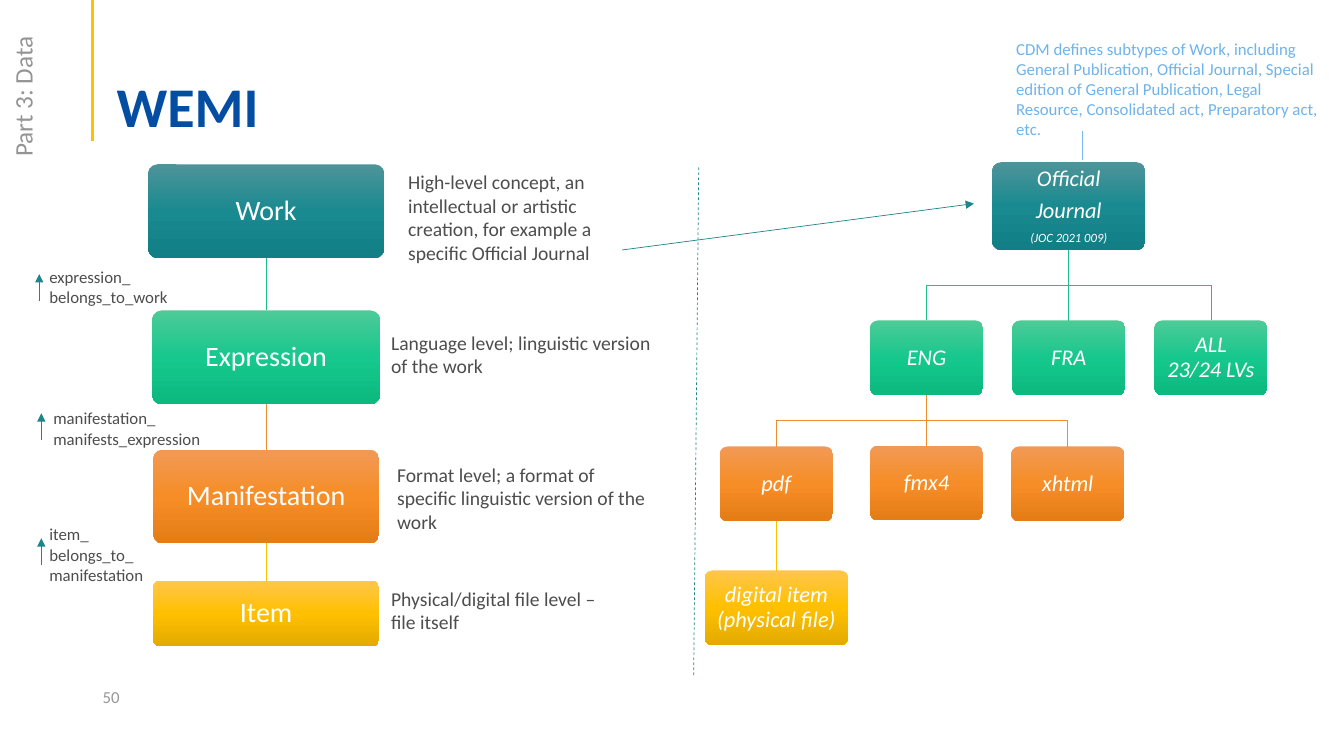
import pptx
import pptx.util
import pptx.dml.color
import pptx.enum.dml
import pptx.enum.shapes
import pptx.enum.text
import pptx.oxml.ns
from lxml import etree

PX = 9144
FONT = "Calibri"
RGB = pptx.dml.color.RGBColor
qn = pptx.oxml.ns.qn
ANCHOR = pptx.enum.text.MSO_ANCHOR
ALIGN = pptx.enum.text.PP_ALIGN

WHITE = RGB(0xFF, 0xFF, 0xFF)
NAVY = RGB(0x03, 0x4E, 0xA2)
DARK = RGB(0x4D, 0x4D, 0x4D)
SIDE_GREY = RGB(0x94, 0x94, 0x94)
NUMBER_GREY = RGB(0x97, 0x97, 0x97)
SKY = RGB(0x6E, 0xB3, 0xEB)
SKY_LINE = RGB(0x78, 0xB6, 0xFC)
TEAL_LINE = RGB(0x1E, 0x85, 0x8B)
GREEN_LINE = RGB(0x1E, 0xC0, 0x8A)
ORANGE_LINE = RGB(0xED, 0x8D, 0x2F)
YELLOW = RGB(0xFF, 0xC0, 0x00)
TEAL_FILL = (RGB(0x4E, 0x94, 0x99), RGB(0x19, 0x8A, 0x90), RGB(0x11, 0x7F, 0x85))
GREEN_FILL = (RGB(0x4E, 0xCA, 0x98), RGB(0x16, 0xC8, 0x8D), RGB(0x0C, 0xB9, 0x7F))
ORANGE_FILL = (RGB(0xF1, 0x9A, 0x56), RGB(0xF6, 0x8D, 0x26), RGB(0xE5, 0x7D, 0x17))
YELLOW_FILL = (RGB(0xFF, 0xC6, 0x4B), YELLOW, RGB(0xE3, 0xAB, 0x00))


def px(*lengths):
    return [pptx.util.Emu(round(length * PX)) for length in lengths]


def style_runs(para, size, color, bold=False, italic=False):
    for span in para.runs:
        span.font.name = FONT
        span.font.size = pptx.util.Pt(size)
        span.font.color.rgb = color
        span.font.bold = bold
        span.font.italic = italic


def add_text(page, box, text, size, color, wrap=True, anchor=ANCHOR.TOP, bold=False):
    label = page.shapes.add_textbox(*px(*box))
    frame = label.text_frame
    frame.word_wrap = wrap
    frame.vertical_anchor = anchor
    frame.text = text
    for para in frame.paragraphs:
        style_runs(para, size, color, bold)
    return label


def add_line(page, start, end, color, width=0.5, arrow=False):
    line = page.shapes.add_connector(
        pptx.enum.shapes.MSO_CONNECTOR.STRAIGHT, *px(*start, *end))
    line.line.color.rgb = color
    line.line.width = pptx.util.Pt(width)
    if arrow:
        etree.SubElement(line.line._get_or_add_ln(), qn("a:tailEnd"), type="triangle")
    etree.SubElement(line._element.spPr, qn("a:effectLst"))
    return line


def join_down(page, upper, lower, color):
    line = add_line(page, (0, 0), (0, 0), color)
    line.begin_connect(upper, 2)
    line.end_connect(lower, 0)


def branch_down(page, upper, lower, color):
    start_x = upper.left + upper.width // 2
    end_x = lower.left + lower.width // 2
    start_y = upper.top + upper.height
    middle_y = (start_y + lower.top) // 2
    builder = page.shapes.build_freeform(start_x, start_y)
    builder.add_line_segments(
        [(start_x, middle_y), (end_x, middle_y), (end_x, lower.top)], close=False)
    branch = builder.convert_to_shape()
    branch.shadow.inherit = False
    branch.fill.background()
    branch.line.color.rgb = color
    branch.line.width = pptx.util.Pt(0.5)


def add_node(page, center, top, width, height, lines, fill, italic=False):
    node = page.shapes.add_shape(
        pptx.enum.shapes.MSO_SHAPE.ROUNDED_RECTANGLE,
        *px(center - width / 2, top, width, height))
    node.adjustments[0] = 0.1
    node.shadow.inherit = False
    node.line.fill.background()
    node.fill.gradient()
    node.fill.gradient_angle = 270
    stops = node._element.spPr.find(qn("a:gradFill")).find(qn("a:gsLst"))
    for stop in list(stops):
        stops.remove(stop)
    for position, color in zip((0, 50000, 100000), fill):
        stop = etree.SubElement(stops, qn("a:gs"), pos=str(position))
        etree.SubElement(stop, qn("a:srgbClr"), val=str(color))
    frame = node.text_frame
    frame.word_wrap = True
    frame.vertical_anchor = ANCHOR.MIDDLE
    frame.margin_left, frame.margin_right, frame.margin_top, frame.margin_bottom = px(9, 9, 9, 9)
    frame.text = "\n".join(text for text, size in lines)
    for para, (text, size) in zip(frame.paragraphs, lines):
        para.alignment = ALIGN.CENTER
        para.line_spacing = 0.9
        para.space_after = pptx.util.Pt(round(size * 0.35, 1))
        style_runs(para, size, WHITE, italic=italic)
    return node


def add_heading(page, left, top):
    add_line(page, (left, top), (left, top + 140), YELLOW, 2.25)
    title = add_text(page, (left + 14, top + 53, 700, 86), "WEMI", 40, NAVY,
                     anchor=ANCHOR.BOTTOM, bold=True)
    title.text_frame.margin_bottom = 0
    title.text_frame.paragraphs[0].line_spacing = 0.9
    part = add_text(page, (left - 140, top + 75, 141, 40), "Part 3: Data", 18,
                    SIDE_GREY, wrap=False)
    part.rotation = 270
    add_text(page, (left, top + 671, 300, 40), "50", 12, NUMBER_GREY, anchor=ANCHOR.MIDDLE)


def add_levels(page, center, top):
    levels = [
        ("Work", 0, 234, 93, TEAL_FILL, None),
        ("Expression", 145, 226, 93, GREEN_FILL, GREEN_LINE),
        ("Manifestation", 283, 224, 93, ORANGE_FILL, ORANGE_LINE),
        ("Item", 413, 224, 65, YELLOW_FILL, YELLOW),
    ]
    upper = None
    for name, offset, width, height, fill, color in levels:
        node = add_node(page, center, top + offset, width, height, [(name, 20)], fill)
        if upper is not None:
            join_down(page, upper, node, color)
        upper = node


def add_descriptions(page, left, top):
    descriptions = [
        (17, 0, 256, 128, "High-level concept, an intellectual or artistic creation, "
                          "for example a specific Official Journal"),
        (0, 159, 279, 57, "Language level; linguistic version of the work"),
        (6, 290, 279, 57, "Format level; a format of specific linguistic version of the work"),
        (0, 413, 239, 57, "Physical/digital file level – file itself"),
    ]
    for across, down, width, height, text in descriptions:
        add_text(page, (left + across, top + down, width, height), text, 14, DARK)


def add_relations(page, left, top):
    relations = [
        (0, 0, 142, 50, "expression_\nbelongs_to_work", 0, 12),
        (4, 140, 182, 50, "manifestation_\nmanifests_expression", 2, 150),
        (0, 255, 122, 71, "item_\nbelongs_to_\nmanifestation", 2, 274),
    ]
    for across, down, width, height, text, arrow_x, arrow_y in relations:
        add_text(page, (left + across, top + down, width, height), text, 12, DARK)
        add_line(page, (left + arrow_x, top + arrow_y + 27),
                 (left + arrow_x, top + arrow_y), TEAL_LINE, arrow=True)


def add_example(page, left, top):
    def leaf(text, across, down, fill, width=112):
        return add_node(page, left + across, top + down, width, 74, [(text, 16)], fill, True)

    journal = add_node(page, left + 361, top, 152, 87,
                       [("Official", 16), ("Journal", 16), ("(JOC 2021 009)", 9)],
                       TEAL_FILL, True)
    english = leaf("ENG", 220, 157, GREEN_FILL)
    french = leaf("FRA", 361, 157, GREEN_FILL)
    others = leaf("ALL 23/24 LVs", 502, 157, GREEN_FILL)
    pdf = leaf("pdf", 71, 282, ORANGE_FILL)
    fmx4 = leaf("fmx4", 220, 281, ORANGE_FILL)
    xhtml = leaf("xhtml", 360, 282, ORANGE_FILL)
    item = leaf("digital item (physical file)", 71, 405, YELLOW_FILL, 142)

    for upper, lower, color in [(journal, french, GREEN_LINE), (english, fmx4, ORANGE_LINE),
                                (pdf, item, YELLOW)]:
        join_down(page, upper, lower, color)
    for upper, lower, color in [(journal, english, GREEN_LINE), (journal, others, GREEN_LINE),
                                (english, pdf, ORANGE_LINE), (english, xhtml, ORANGE_LINE)]:
        branch_down(page, upper, lower, color)


def add_subtype_note(page, left, top):
    add_text(page, (left, top, 328, 111),
             "CDM defines subtypes of Work, including General Publication, Official Journal, "
             "Special edition of General Publication, Legal Resource, Consolidated act, "
             "Preparatory act, etc.", 12, SKY)
    add_line(page, (left + 76, top + 126), (left + 76, top + 97), SKY_LINE)


def main():
    deck = pptx.Presentation()
    deck.slide_width, deck.slide_height = px(1333, 750)
    page = deck.slides.add_slide(deck.slide_layouts[6])
    add_heading(page, 92, 0)
    add_levels(page, 264, 163)
    divider = add_line(page, (693, 166), (688, 671), TEAL_LINE)
    divider.line.dash_style = pptx.enum.dml.MSO_LINE.DASH
    add_example(page, 699, 161)
    add_subtype_note(page, 998, 33)
    add_relations(page, 39, 260)
    add_descriptions(page, 378, 164)
    add_line(page, (617, 248), (966, 202), TEAL_LINE, arrow=True)
    deck.save("out.pptx")


if __name__ == "__main__":
    main()
